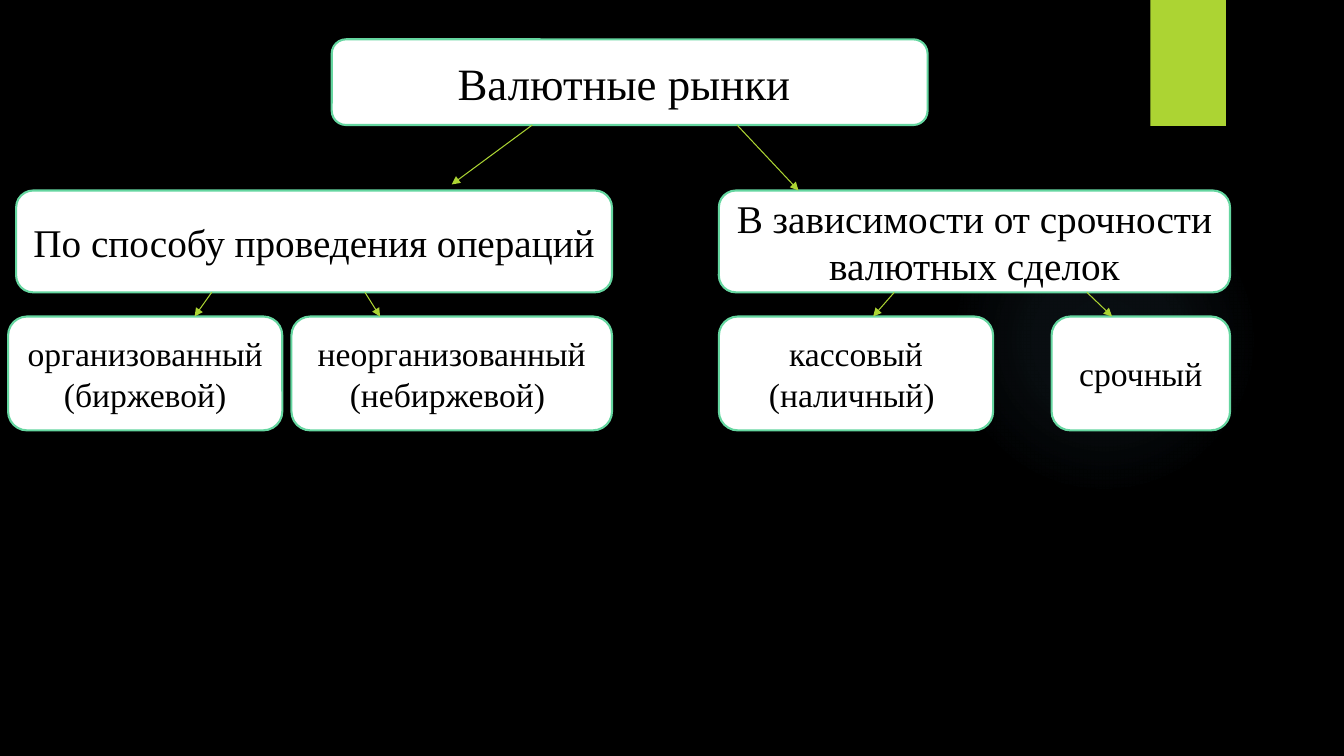
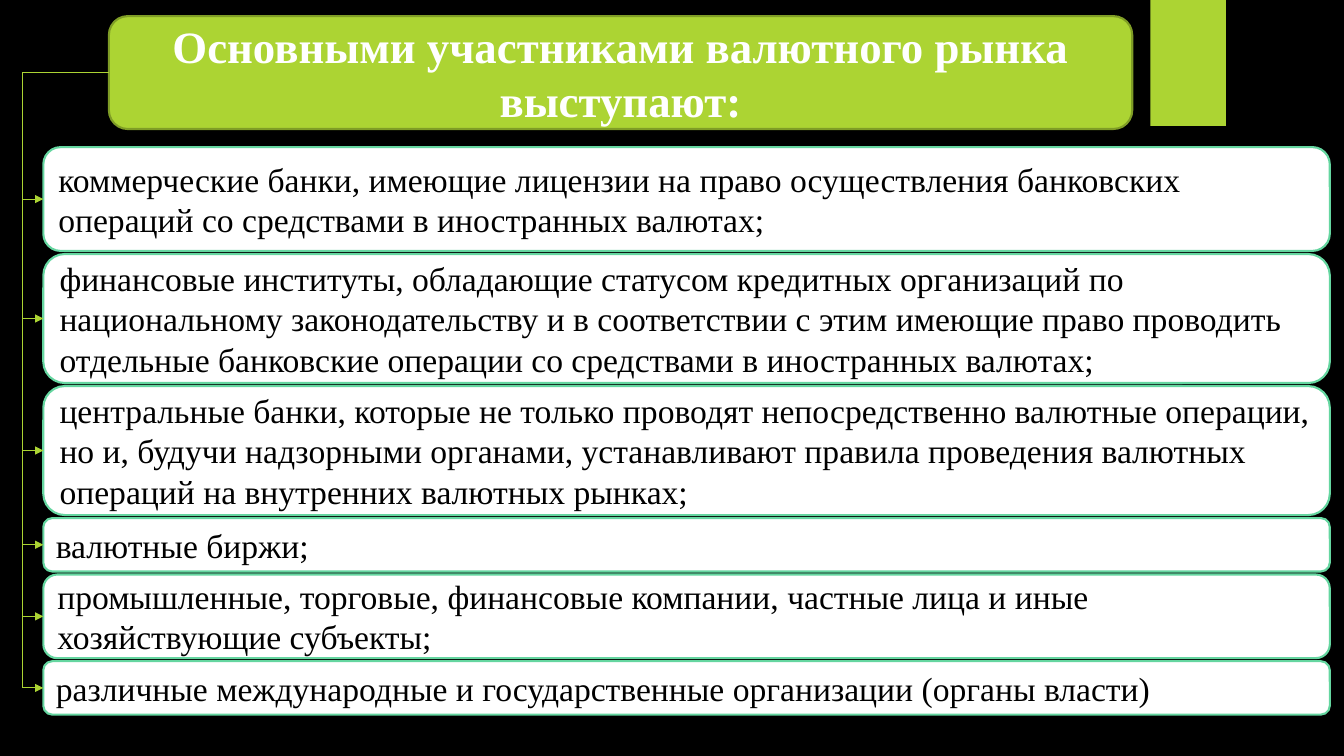
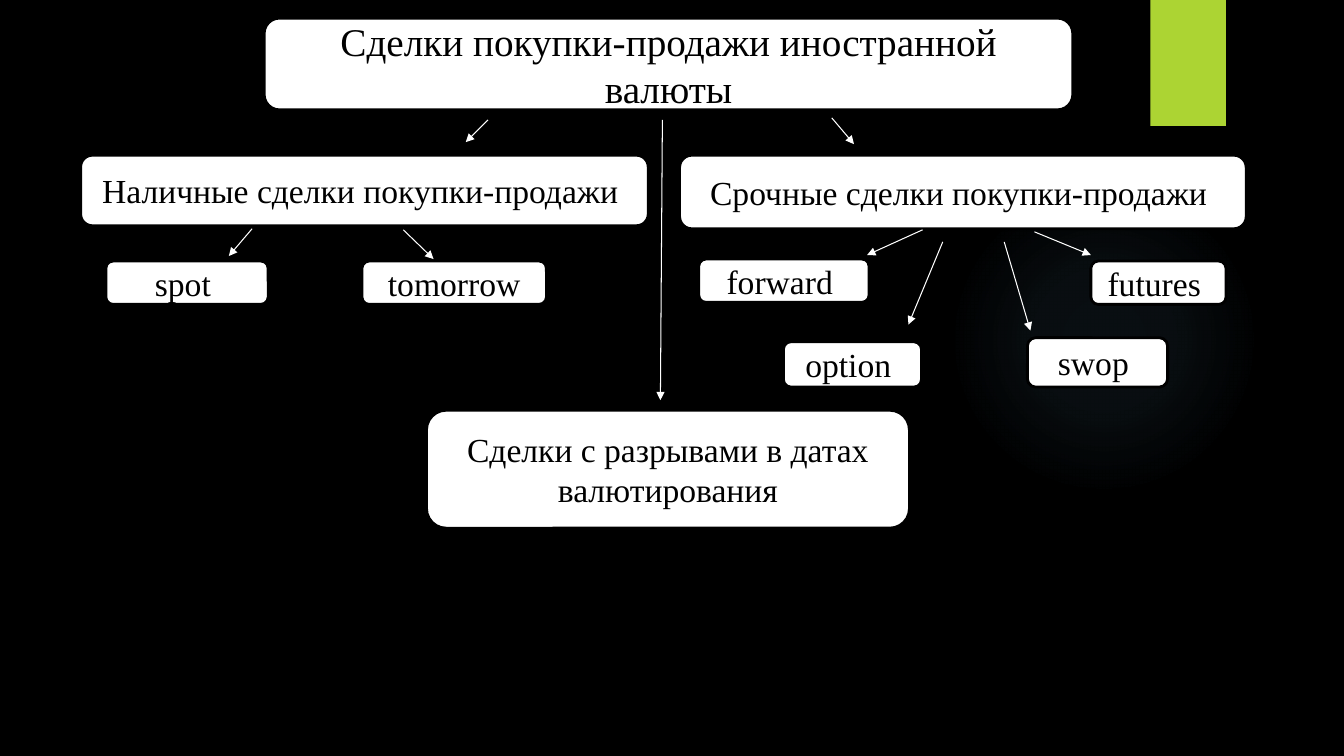
from pptx import Presentation
from pptx.dml.color import RGBColor
from pptx.enum import shapes, text
from pptx.oxml import parse_xml
from pptx.oxml.ns import nsdecls, qn
from pptx.util import Inches, Pt

BLACK = RGBColor(0x00, 0x00, 0x00)
WHITE = RGBColor(0xFF, 0xFF, 0xFF)
LIME = RGBColor(0xAC, 0xD4, 0x33)
OLIVE = RGBColor(0x7F, 0x9D, 0x26)
MINT = RGBColor(0x65, 0xD6, 0xA0)
SKY = RGBColor(0x7A, 0xC4, 0xF0)
FONT = "Times New Roman"
ROUNDED = shapes.MSO_SHAPE.ROUNDED_RECTANGLE
CENTER, LEFT = text.PP_ALIGN.CENTER, text.PP_ALIGN.LEFT


class Diagram:
    """Holds the deck, its shared style and the page being drawn."""

    def __init__(self):
        self.deck = Presentation()
        self.deck.slide_width, self.deck.slide_height = Inches(13.33), Inches(7.5)
        self.layout = self.deck.slide_layouts.get_by_name("Title Only")
        background = self.deck.slide_master.background.fill
        background.solid()
        background.fore_color.rgb = BLACK
        self.page = None

    def new_page(self, outline, arrow_color):
        self.page = self.deck.slides.add_slide(self.layout)
        self.outline, self.arrow_color = outline, arrow_color
        if len(self.deck.slides) == 1:
            self.share_decor()

    def share_decor(self):
        """Draws the glow and the corner band and moves them to the layout."""
        glow = self.shape(shapes.MSO_SHAPE.OVAL, (9.41, 1.83, 3.08, 3.08), SKY)
        stops = "".join(
            f'<a:gs pos="{place * 1000}"><a:srgbClr val="{SKY}">'
            f'<a:alpha val="{alpha * 1000}"/></a:srgbClr></a:gs>'
            for place, alpha in ((0, 7), (36, 6), (69, 0), (100, 0)))
        solid = glow._element.spPr.find(qn("a:solidFill"))
        solid.getparent().replace(solid, parse_xml(
            f'<a:gradFill {nsdecls("a")}><a:gsLst>{stops}</a:gsLst>'
            '<a:path path="circle"><a:fillToRect l="50000" t="50000" r="50000" b="50000"/>'
            '</a:path></a:gradFill>'))

        band = self.shape(shapes.MSO_SHAPE.RECTANGLE, (11.41, 0, 0.75, 1.25), LIME)
        band._element.spPr.find(qn("a:effectLst")).append(parse_xml(
            f'<a:outerShdw {nsdecls("a")} blurRad="{Pt(3)}" dist="{Pt(2)}" dir="5400000">'
            f'<a:srgbClr val="{BLACK}"><a:alpha val="45000"/></a:srgbClr></a:outerShdw>'))

        for order, decor in enumerate((glow, band)):
            decor._element.nvSpPr.cNvPr.set("id", str(101 + order))
            self.layout.shapes._spTree.insert(2 + order, decor._element)

    def shape(self, kind, place, fill, line=None, width=1.5):
        shape = self.page.shapes.add_shape(kind, *map(Inches, place))
        shape.shadow.inherit = False
        shape.fill.solid()
        shape.fill.fore_color.rgb = fill
        if line is None:
            shape.line.fill.background()
        else:
            shape.line.color.rgb = line
            shape.line.width = Pt(width)
        return shape

    def put_text(self, holder, words, size, color=BLACK, align=CENTER, bold=False):
        frame = holder.text_frame
        frame.text = words
        frame.word_wrap = True
        frame.auto_size = text.MSO_AUTO_SIZE.NONE
        frame.vertical_anchor = text.MSO_ANCHOR.MIDDLE
        para = frame.paragraphs[0]
        para.alignment = align
        font = para.runs[0].font
        font.name, font.size, font.bold = FONT, Pt(size), bold
        font.color.rgb = color

    def panel(self, place, fill=WHITE, line=None):
        line = self.outline if line is None else line
        return self.shape(ROUNDED, place, fill, line, 2 if line == BLACK else 1.5)

    def box(self, words, place, size=24, align=CENTER):
        box = self.panel(place)
        self.put_text(box, words, size, align=align)
        return box

    def title(self, words, place, size, fill=WHITE, line=None, color=BLACK, bold=False):
        """Lays the title placeholder on a rounded panel."""
        panel = self.panel(place, fill, line)
        title = self.page.shapes.title
        title.left, title.top, title.width, title.height = map(Inches, place)
        self.page.shapes._spTree.append(title._element)
        self.put_text(title, words, size, color, bold=bold)
        title.text_frame.margin_left = title.text_frame.margin_right = Inches(0.15)
        return panel

    def line(self, start, end, arrow=True):
        """Joins two points; a (shape, site) pair glues that end to a shape."""
        glued_start, glued_end = (not isinstance(p[0], (int, float)) for p in (start, end))
        first = (0, 0) if glued_start else start
        last = (0, 0) if glued_end else end
        line = self.page.shapes.add_connector(
            shapes.MSO_CONNECTOR.STRAIGHT, *map(Inches, (*first, *last)))
        if glued_start:
            line.begin_connect(*start)
        if glued_end:
            line.end_connect(*end)
        line.line.color.rgb = self.arrow_color
        line.line.width = Pt(0.75)
        if arrow:
            line.line._get_or_add_ln().append(
                parse_xml(f'<a:tailEnd {nsdecls("a")} type="triangle"/>'))
        line._element.spPr.append(parse_xml(f'<a:effectLst {nsdecls("a")}/>'))


def draw_markets(diagram):
    diagram.new_page(MINT, LIME)
    diagram.title("Валютные рынки ", (3.29, 0.39, 5.91, 0.85), 32)
    # Two ways to classify the markets
    for words, left, width in (
            ("По способу проведения операций", 0.16, 5.91),
            ("В зависимости от срочности валютных сделок", 7.13, 5.07)):
        diagram.box(words, (left, 1.89, width, 1.01), 28)
    # Kinds of market
    for words, left, width in (
            ("организованный (биржевой)", 0.08, 2.72),
            ("неорганизованный (небиржевой) ", 2.89, 3.18),
            ("кассовый (наличный) ", 7.13, 2.72),
            ("срочный", 10.43, 1.77)):
        diagram.box(words, (left, 3.14, width, 1.13))
    # Arrows
    diagram.line((5.28, 1.24), (4.48, 1.83))
    diagram.line((7.31, 1.24), (7.92, 1.89))
    for start, end in ((2.1, 1.93), (3.62, 3.77), (8.87, 8.66), (10.78, 11.03)):
        diagram.line((start, 2.9), (end, 3.14))


def draw_participants(diagram):
    diagram.new_page(MINT, LIME)
    header = diagram.title(
        "Основными участниками валютного рынка выступают:",
        (1.08, 0.16, 10.15, 1.12), 32, LIME, OLIVE, WHITE, bold=True)
    # Stack of participants, each joined to the trunk
    trunk, top, gap = 0.22, 1.46, 0.03
    for words, height in (
            ("коммерческие банки, имеющие лицензии на право осуществления банковских "
             "операций со средствами в иностранных валютах;", 1.03),
            ("финансовые институты, обладающие статусом кредитных организаций по "
             "национальному законодательству и в соответствии с этим имеющие право проводить "
             "отдельные банковские операции со средствами в иностранных валютах;", 1.28),
            ("центральные банки, которые не только проводят непосредственно валютные операции, "
             "но и, будучи надзорными органами, устанавливают правила проведения валютных "
             "операций на внутренних валютных рынках;", 1.28),
            ("валютные биржи;", 0.53),
            ("промышленные, торговые, финансовые компании, частные лица и иные "
             "хозяйствующие субъекты;", 0.83),
            ("различные международные и государственные организации (органы власти)", 0.53)):
        row = diagram.box(words, (0.43, top, 12.76, height), align=LEFT)
        middle = top + height / 2
        diagram.line((trunk, middle), (row, 1))
        top += height + gap
    # Trunk from the header down to the last row
    diagram.line((trunk, 0.72), (header, 1), arrow=False)
    diagram.line((trunk, 0.72), (trunk, middle), arrow=False)


def draw_deals(diagram):
    diagram.new_page(BLACK, WHITE)
    diagram.title("Сделки покупки-продажи иностранной валюты", (2.62, 0.18, 8.02, 0.91), 28)
    # Groups of deals and their kinds
    for words, place in (
            ("Наличные сделки покупки-продажи ", (0.8, 1.54, 5.63, 0.7)),
            ("Срочные сделки покупки-продажи ", (6.74, 1.54, 5.62, 0.73)),
            ("Сделки с разрывами в датах валютирования", (4.23, 4.07, 4.79, 1.17)),
            ("spot ", (1.05, 2.59, 1.61, 0.43)),
            ("tomorrow", (3.59, 2.59, 1.83, 0.43)),
            ("forward ", (6.93, 2.57, 1.69, 0.43)),
            ("futures ", (10.82, 2.59, 1.34, 0.43)),
            ("option ", (7.77, 3.39, 1.37, 0.45)),
            ("swop ", (10.19, 3.35, 1.39, 0.49))):
        diagram.box(words, place)
    # Arrows
    for start, end in (
            ((4.84, 1.19), (4.62, 1.41)), ((8.25, 1.17), (8.47, 1.43)),
            ((6.57, 1.19), (6.55, 3.97)),
            ((2.5, 2.27), (2.27, 2.54)), ((4, 2.28), (4.3, 2.57)),
            ((9.15, 2.28), (8.6, 2.53)), ((10.26, 2.3), (10.82, 2.53)),
            ((9.35, 2.4), (9.01, 3.22)), ((9.96, 2.4), (10.22, 3.28))):
        diagram.line(start, end)


def main():
    diagram = Diagram()
    draw_markets(diagram)
    draw_participants(diagram)
    draw_deals(diagram)
    diagram.deck.save("out.pptx")


if __name__ == "__main__":
    main()
